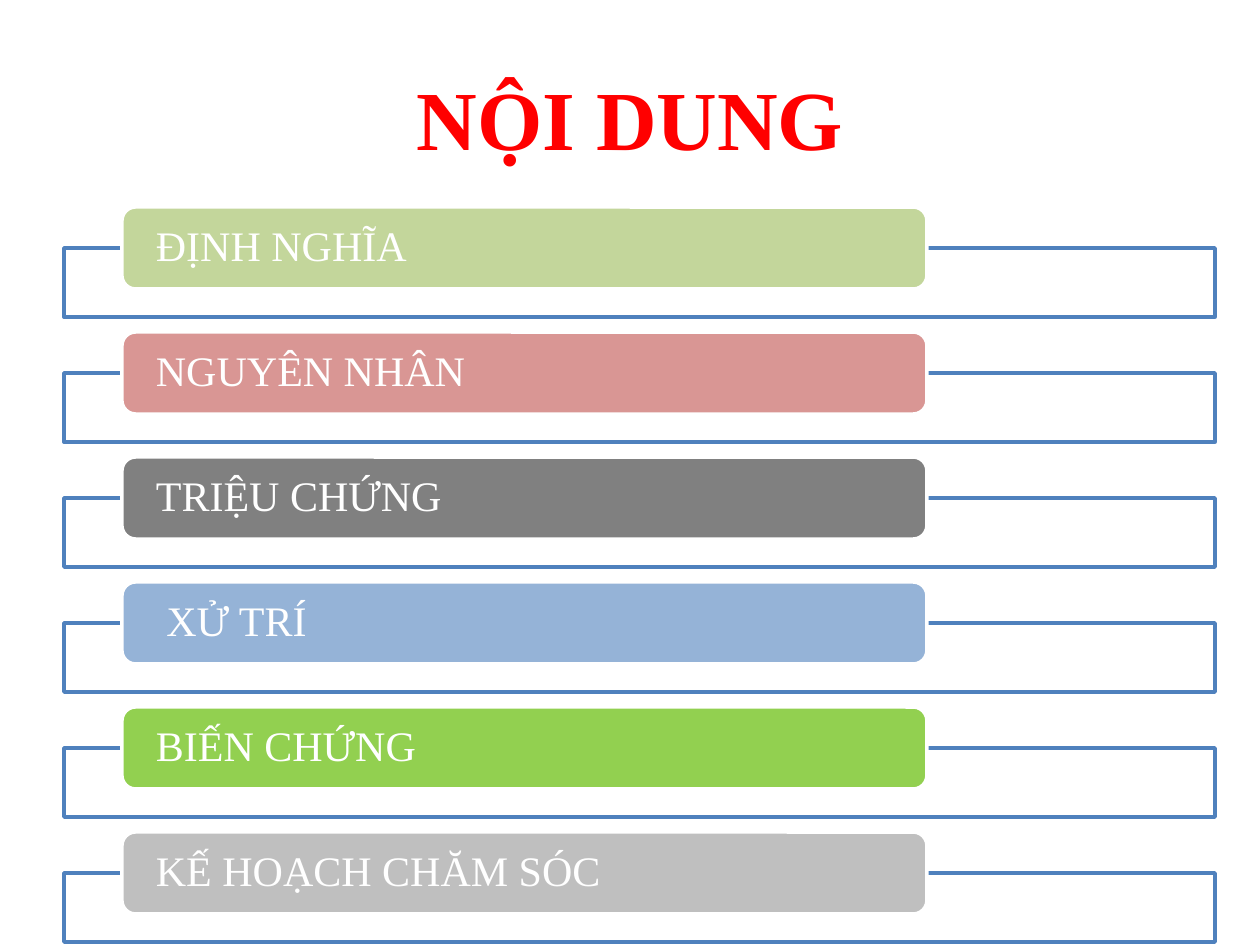
from dataclasses import dataclass

from pptx import Presentation
from pptx.dml.color import RGBColor
from pptx.enum.shapes import MSO_SHAPE
from pptx.enum.text import MSO_ANCHOR, PP_ALIGN
from pptx.util import Emu, Inches, Pt

RECTANGLE = MSO_SHAPE.RECTANGLE
ROUNDED = MSO_SHAPE.ROUNDED_RECTANGLE
MIDDLE = MSO_ANCHOR.MIDDLE
LEFT = PP_ALIGN.LEFT
CENTER = PP_ALIGN.CENTER
TITLE_ONLY = 5
EMU_PER_PX = 914400 / 126


@dataclass(frozen=True)
class Theme:
    font: str = "Times New Roman"
    title_size: int = 48
    topic_size: int = 24
    line_width: int = 2
    title: str = "FF0000"
    white: str = "FFFFFF"
    frame: str = "4F81BD"


TOPICS = [
    ("ĐỊNH NGHĨA", "C3D69B"),
    ("NGUYÊN NHÂN", "D99694"),
    ("TRIỆU CHỨNG", "808080"),
    (" XỬ TRÍ", "95B3D7"),
    ("BIẾN CHỨNG", "92D050"),
    ("KẾ HOẠCH CHĂM SÓC", "BFBFBF"),
]
FIRST_TOP = 207
ROW_PITCH = 125
FRAME_DROP = 41


def px(length):
    return Emu(round(length * EMU_PER_PX))


def write_text(shape, text, *, font, size, color, bold=False, align=LEFT,
               margin=0, line_spacing=None):
    frame = shape.text_frame
    frame.word_wrap = True
    frame.vertical_anchor = MIDDLE
    frame.margin_left = frame.margin_right = px(margin)
    frame.margin_top = frame.margin_bottom = 0
    paragraph = frame.paragraphs[0]
    paragraph.alignment = align
    paragraph.line_spacing = line_spacing
    run = paragraph.add_run()
    run.text = text
    run.font.name = font
    run.font.size = Pt(size)
    run.font.bold = bold
    run.font.color.rgb = RGBColor.from_string(color)


class SlideBuilder:
    def __init__(self, slide, theme):
        self.slide = slide
        self.theme = theme

    def title(self, text, left, top, width, height):
        shape = self.slide.shapes.title
        shape.left, shape.top = px(left), px(top)
        shape.width, shape.height = px(width), px(height)
        write_text(shape, text, font=self.theme.font, size=self.theme.title_size,
                   color=self.theme.title, bold=True, align=CENTER)

    def box(self, kind, left, top, width, height, fill, line):
        shape = self.slide.shapes.add_shape(
            kind, px(left), px(top), px(width), px(height))
        shape.shadow.inherit = False
        shape.fill.solid()
        shape.fill.fore_color.rgb = RGBColor.from_string(fill)
        shape.line.color.rgb = RGBColor.from_string(line)
        shape.line.width = Pt(self.theme.line_width)
        return shape

    def topic(self, text, color, top):
        theme = self.theme
        self.box(RECTANGLE, 64, top + FRAME_DROP, 1151, 69, theme.white, theme.frame)
        label = self.box(ROUNDED, 122, top, 805, 82, color, theme.white)
        write_text(label, text, font=theme.font, size=theme.topic_size,
                   color=theme.white, margin=30, line_spacing=0.9)


def main():
    presentation = Presentation()
    presentation.slide_width = Inches(10)
    presentation.slide_height = Inches(7.5)
    slide = presentation.slides.add_slide(presentation.slide_layouts[TITLE_ONLY])
    builder = SlideBuilder(slide, Theme())
    builder.title("NỘI DUNG", 63, 38, 1134, 157)
    for row, (text, color) in enumerate(TOPICS):
        builder.topic(text, color, FIRST_TOP + row * ROW_PITCH)
    presentation.save("out.pptx")


if __name__ == "__main__":
    main()
